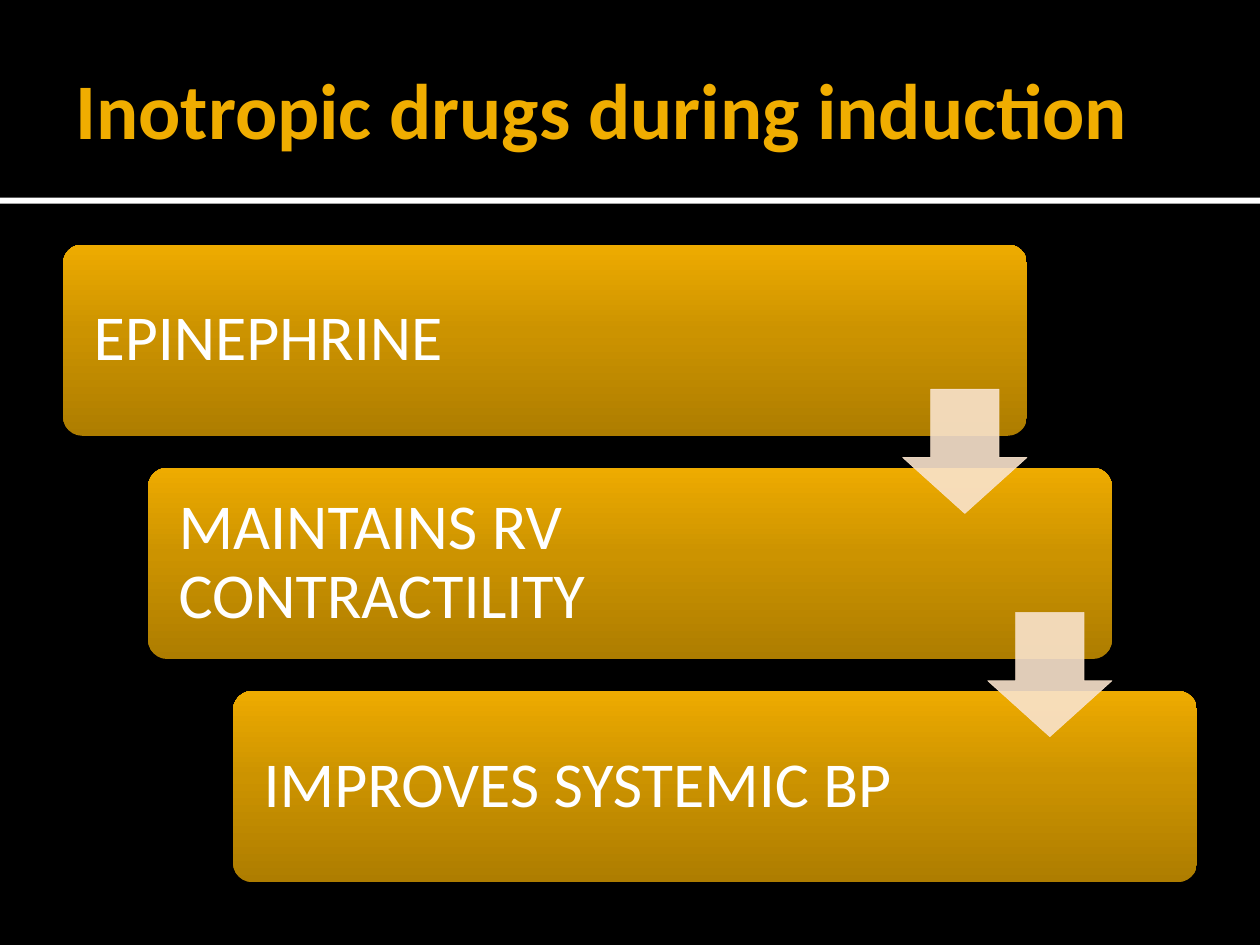
from copy import deepcopy

from lxml.etree import SubElement
from pptx import Presentation
from pptx.dml.color import RGBColor
from pptx.enum.shapes import MSO_SHAPE
from pptx.enum.text import MSO_ANCHOR, MSO_AUTO_SIZE, PP_ALIGN
from pptx.oxml.ns import qn
from pptx.util import Pt

BLACK = RGBColor(0x00, 0x00, 0x00)
WHITE = RGBColor(0xFF, 0xFF, 0xFF)
AMBER = RGBColor(0xF0, 0xAD, 0x00)
CREAM = RGBColor(0xF9, 0xE3, 0xCC)
STEP_GRADIENT = [
    (0, RGBColor(0xAE, 0x7D, 0x00)),
    (0.55, RGBColor(0xCC, 0x93, 0x00)),
    (1, RGBColor(0xEE, 0xAB, 0x00)),
]

WIDTH, HEIGHT = 1024, 768
STEPS = ["EPINEPHRINE", "MAINTAINS RV CONTRACTILITY", "IMPROVES SYSTEMIC BP"]
STEP_LEFT, STEP_TOP = 51.2, 198.8
STEP_WIDTH, STEP_HEIGHT = 783.4, 155.4
SHIFT_X, SHIFT_Y = 69.1, 181.4
ARROW_SIZE, ARROW_DROP = 101, 117.5


class SlideStyle:
    font = "Calibri"

    def __init__(self, slide):
        self.slide = slide
        slide.background.fill.solid()
        slide.background.fill.fore_color.rgb = BLACK

    def set_text(self, shape, text, size, color, insets, bold=False):
        frame = shape.text_frame
        frame.text = text
        frame.word_wrap = True
        frame.auto_size = MSO_AUTO_SIZE.NONE
        frame.vertical_anchor = MSO_ANCHOR.MIDDLE
        (frame.margin_left, frame.margin_top,
         frame.margin_right, frame.margin_bottom) = map(Pt, insets)
        paragraph = frame.paragraphs[0]
        paragraph.alignment = PP_ALIGN.LEFT
        font = paragraph.runs[0].font
        font.name, font.size, font.bold = self.font, Pt(size), bold
        font.color.rgb = color
        return paragraph

    def title(self, text, left, top, width, height):
        heading = self.slide.shapes.title
        heading.left, heading.top = Pt(left), Pt(top)
        heading.width, heading.height = Pt(width), Pt(height)
        self.set_text(heading, text, 64, AMBER, (10, 5, 5, 5), bold=True)

    def shape(self, kind, left, top, width, height, adjustments=()):
        shape = self.slide.shapes.add_shape(
            kind, Pt(left), Pt(top), Pt(width), Pt(height))
        shape.shadow.inherit = False
        for index, value in enumerate(adjustments):
            shape.adjustments[index] = value
        return shape

    def rule(self, top, thickness):
        band = self.shape(MSO_SHAPE.RECTANGLE, 0, top, WIDTH, thickness)
        band.fill.solid()
        band.fill.fore_color.rgb = WHITE
        band.line.fill.background()

    def step(self, text, left, top):
        box = self.shape(MSO_SHAPE.ROUNDED_RECTANGLE, left, top,
                         STEP_WIDTH, STEP_HEIGHT, [0.1])
        box.line.fill.background()
        box.fill.gradient()
        box.fill.gradient_angle = 90
        stop_list = box._element.spPr.find(".//" + qn("a:gsLst"))
        stop_list.append(deepcopy(stop_list[0]))
        for stop, (position, color) in zip(box.fill.gradient_stops, STEP_GRADIENT):
            stop.position = position
            stop.color.rgb = color
        # The wide right inset keeps the text clear of the arrow
        paragraph = self.set_text(box, text, 52, WHITE, (20.3, 16, 190, 16))
        paragraph.line_spacing = 0.9

    def arrow(self, left, top):
        arrow = self.shape(MSO_SHAPE.DOWN_ARROW, left, top,
                           ARROW_SIZE, ARROW_SIZE, [0.55, 0.45])
        arrow.fill.solid()
        arrow.fill.fore_color.rgb = CREAM
        arrow.line.color.rgb = CREAM
        arrow.line.width = Pt(0.5)
        for color in arrow._element.spPr.iter(qn("a:srgbClr")):
            SubElement(color, qn("a:alpha"), val="90000")


def main():
    deck = Presentation()
    deck.slide_width, deck.slide_height = Pt(WIDTH), Pt(HEIGHT)
    style = SlideStyle(deck.slides.add_slide(deck.slide_layouts[5]))

    # Heading and rule
    style.title("Inotropic drugs during induction", 51.2, 17.3, 921.6, 140.4)
    style.rule(160.6, 5)

    # Staggered steps
    places = [(STEP_LEFT + i * SHIFT_X, STEP_TOP + i * SHIFT_Y)
              for i in range(len(STEPS))]
    for text, (left, top) in zip(STEPS, places):
        style.step(text, left, top)

    # Arrows flush with the right edge of the step they leave
    for left, top in places[:-1]:
        style.arrow(left + STEP_WIDTH - ARROW_SIZE, top + ARROW_DROP)

    deck.save("out.pptx")


if __name__ == "__main__":
    main()
